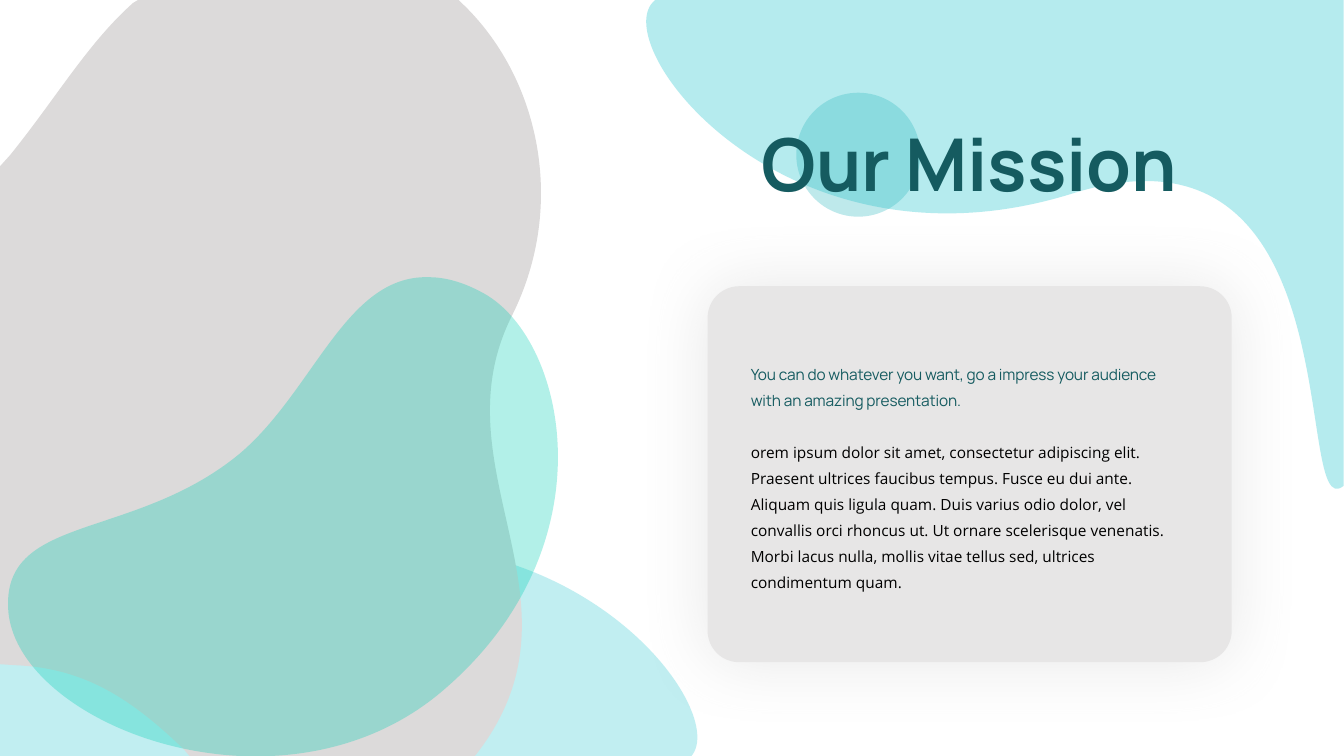
from dataclasses import dataclass
from lxml import etree
from pptx import Presentation, util as u
from pptx.dml.color import RGBColor
from pptx.enum import shapes, text
from pptx.oxml.ns import qn

PX = 9144  # EMU per px, 100 px to the inch


@dataclass(frozen=True)
class Theme:
    aqua: str = "77DBE1"
    mint: str = "00D0B3"
    teal: str = "2AB7BF"
    dark: str = "155B60"
    stone: str = "DCDADA"
    panel: str = "E7E6E6"
    shade: str = "898989"
    ink: str = "000000"
    head: str = "Manrope"
    body: str = "Open Sans"
    big: float = 52
    small: float = 11
    lead: float = 18.5


T = Theme()

# Each outline: start point, then lines (x, y) and curves (two handles, end).
WAVE = [(0, 485), (0, 3), (52, -39, -15, 382, 269, 293),
        (554, 204, 735, 443, 683, 485)]
STONE = [(137, 0), (455, 0), (458, 3), (535, 76, 563, 203, 508, 313),
         (431, 466, 591, 597, 472, 749), (471, 750), (188, 750), (182, 743),
         (130, 693, 84, 663, 16, 660), (0, 659), (0, 165), (10, 154),
         (56, 97, 87, 43, 132, 3)]
MINT = [(414, -84), (429, -84, 446, -80, 465, -70),
        (551, -28, 599, 184, 425, 329), (264, 462, 0, 358, -3, 243),
        (-6, 151, 123, 177, 227, 91), (301, 28, 332, -86, 414, -84)]

LEAD = ("You can do whatever you want, go a impress your audience "
        "with an amazing presentation.")
BODY = ("orem ipsum dolor sit amet, consectetur adipiscing elit. Praesent "
        "ultrices faucibus tempus. Fusce eu dui ante. Aliquam quis ligula "
        "quam. Duis varius odio dolor, vel convallis orci rhoncus ut. Ut "
        "ornare scelerisque venenatis. Morbi lacus nulla, mollis vitae "
        "tellus sed, ultrices condimentum quam.")


def emu(*nums):
    return [round(n * PX) for n in nums]


def put(item, **vals):
    for key, val in vals.items():
        setattr(item, key, val)


def alpha(color, pct):
    etree.SubElement(color, qn("a:alpha"), val=str(pct * 1000))


def paint(shape, color, pct=100):
    shape.shadow.inherit = False
    shape.fill.solid()
    shape.fill.fore_color.rgb = RGBColor.from_string(color)
    shape.line.fill.background()
    if pct < 100:
        alpha(next(shape._element.spPr.iter(qn("a:srgbClr"))), pct)


def blob(slide, box, path, color, pct=100, turn=False):
    """Draw an outline inside box, turned by half a circle on request."""
    x, y, w, h = box

    def spot(px, py):
        return emu(x + w - px, y + h - py) if turn else emu(x + px, y + py)

    parts = [[spot(*part[i:i + 2]) for i in range(0, len(part), 2)]
             for part in path]
    form = slide.shapes.build_freeform(*parts[0][0])
    form.add_line_segments([part[-1] for part in parts[1:]], close=True)
    shape = form.convert_to_shape()
    lines = list(shape._element.iter(qn("a:lnTo")))
    for line, part in zip(lines, parts[1:]):
        if len(part) == 3:
            curve = etree.Element(qn("a:cubicBezTo"))
            for px, py in part:
                etree.SubElement(curve, qn("a:pt"), x=str(px - shape.left),
                                 y=str(py - shape.top))
            line.getparent().replace(line, curve)
    paint(shape, color, pct)


def write(slide, box, anchor, paras):
    """Add a text box; paras holds (words, paragraph values, font values, hue)."""
    frame = slide.shapes.add_textbox(*emu(*box)).text_frame
    put(frame, word_wrap=True, vertical_anchor=anchor)
    for i, (words, form, font, hue) in enumerate(paras):
        para = frame.add_paragraph() if i else frame.paragraphs[0]
        put(para, **form)
        run = para.add_run()
        run.text = words
        put(run.font, **font)
        run.font.color.rgb = RGBColor.from_string(hue)
    return frame


def title(slide, box):
    x, y, w, h = box
    dot = slide.shapes.add_shape(shapes.MSO_SHAPE.OVAL,
                                 *emu(x + 88, y - 19, 123, 123))
    paint(dot, T.teal, 30)
    write(slide, box, text.MSO_ANCHOR.BOTTOM, [
        ("Our Mission", dict(alignment=text.PP_ALIGN.CENTER),
         dict(name=T.head, size=u.Pt(T.big), bold=True), T.dark)])


def card(slide, box):
    x, y, w, h = box
    panel = slide.shapes.add_shape(shapes.MSO_SHAPE.ROUNDED_RECTANGLE,
                                   *emu(*box))
    panel.adjustments[0] = 0.084
    paint(panel, T.panel)
    glow = etree.SubElement(panel._element.spPr.find(qn("a:effectLst")),
                            qn("a:outerShdw"), blurRad=str(u.Pt(50)),
                            dist="0", dir="0", algn="ctr", rotWithShape="0")
    alpha(etree.SubElement(glow, qn("a:srgbClr"), val=T.shade), 20)
    step = u.Pt(T.lead)
    size = u.Pt(T.small)
    frame = write(slide, (x + 33, y + 63, w - 66, h - 125),
                  text.MSO_ANCHOR.MIDDLE, [
        (LEAD, dict(line_spacing=step), dict(name=T.head, size=size), T.dark),
        (BODY, dict(line_spacing=step, space_before=step),
         dict(name=T.body, size=size), T.ink)])
    frame.paragraphs[0].runs[0].font._element.set("spc", "-10")


def main():
    deck = Presentation()
    put(deck, slide_width=u.Emu(12192000), slide_height=u.Emu(750 * PX))
    slide = deck.slides.add_slide(deck.slide_layouts[6])
    blob(slide, (641, 0, 692, 485), WAVE, T.aqua, 54, turn=True)
    blob(slide, (0, 268, 692, 485), WAVE, T.aqua, 45)
    blob(slide, (0, 0, 536, 750), STONE, T.stone)
    card(slide, (702, 284, 520, 373))
    title(slide, (702, 111, 520, 98))
    blob(slide, (11, 359, 590, 379), MINT, T.mint, 30)
    deck.save("out.pptx")


if __name__ == "__main__":
    main()
